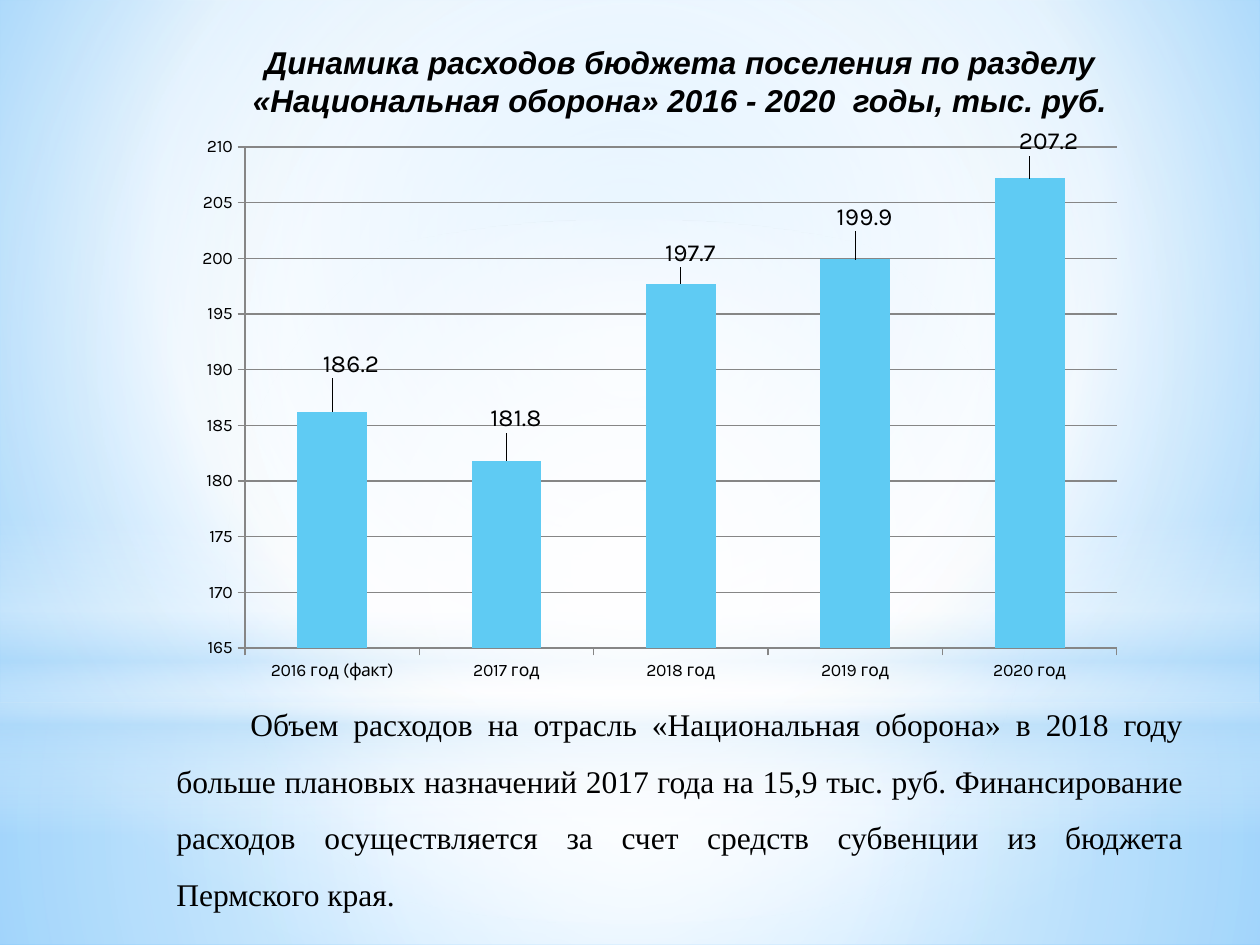
from lxml import etree
from pptx import Presentation
from pptx.chart.data import CategoryChartData
from pptx.dml.color import RGBColor
from pptx.enum.chart import XL_CHART_TYPE, XL_LABEL_POSITION, XL_TICK_MARK
from pptx.enum.shapes import MSO_SHAPE
from pptx.enum.text import PP_ALIGN
from pptx.oxml import parse_xml
from pptx.oxml.ns import nsdecls, qn
from pptx.util import Pt

PX = 914400 / 126
BLACK = RGBColor(0x00, 0x00, 0x00)
BAR_BLUE = RGBColor(0x5F, 0xCB, 0xF3)
GRID_GRAY = RGBColor(0x86, 0x86, 0x86)


def px(*lengths):
    return [round(length * PX) for length in lengths]


def set_gradient(owner, stops, focus):
    gradient = etree.Element(qn("a:gradFill"), rotWithShape="1")
    stop_list = etree.SubElement(gradient, qn("a:gsLst"))
    for position, color, alpha in stops:
        stop = etree.SubElement(stop_list, qn("a:gs"), pos=str(position * 1000))
        tint = etree.SubElement(stop, qn("a:srgbClr"), val=color)
        if alpha < 100:
            etree.SubElement(tint, qn("a:alpha"), val=str(alpha * 1000))
    if focus:
        circle = etree.SubElement(gradient, qn("a:path"), path="circle")
        sides = {side: str(share * 1000) for side, share in zip("ltrb", focus)}
        etree.SubElement(circle, qn("a:fillToRect"), **sides)
    else:
        etree.SubElement(gradient, qn("a:lin"), ang="5400000", scaled="0")
    solid = owner.find(".//" + qn("a:solidFill"))
    solid.getparent().replace(solid, gradient)


presentation = Presentation()
presentation.slide_width, presentation.slide_height = px(1260, 945)
slide = presentation.slides.add_slide(presentation.slide_layouts[6])

slide.background.fill.solid()
set_gradient(
    slide.element,
    [(0, "9ED5FF", 100), (60, "FFFFFF", 100), (100, "5BB9FF", 100)],
    (20, 10, 20, 60),
)

CENTER = (50, 50, 50, 50)
glows = [
    (MSO_SHAPE.RECTANGLE, (0, 703, 1260, 242), CENTER,
     [(0, "FFFFFF", 91), (37, "FFFFFF", 76), (100, "B4DCFA", 79)]),
    (MSO_SHAPE.RECTANGLE, (0, 0, 1260, 703), CENTER,
     [(0, "FFFFFF", 89), (48, "FFFFFF", 62), (100, "B4DCFA", 79)]),
    (MSO_SHAPE.RECTANGLE, (0, 519, 1260, 315), None,
     [(0, "FFFFFF", 0), (29, "FFFFFF", 30), (45, "B4DCFA", 40),
      (55, "FFFFFF", 26), (65, "B4DCFA", 60), (100, "FFFFFF", 0)]),
    (MSO_SHAPE.OVAL, (0, 220, 1260, 703), CENTER,
     [(0, "FFFFFF", 100), (56, "FFFFFF", 0)]),
]
for outline, box, focus, stops in glows:
    glow = slide.shapes.add_shape(outline, *px(*box))
    glow.shadow.inherit = False
    glow.line.fill.background()
    glow.fill.solid()
    set_gradient(glow.element, stops, focus)

texts = [
    ((164, 37, 1032, 89), PP_ALIGN.CENTER, "Arial", True, 1, 0,
     "Динамика расходов бюджета поселения по разделу\n"
     "«Национальная оборона» 2016 - 2020  годы, тыс. руб."),
    ((164, 680, 1032, 242), PP_ALIGN.JUSTIFY, "Times New Roman", False, 1.5, 74,
     "Объем расходов на отрасль «Национальная оборона» в 2018 году больше "
     "плановых назначений 2017 года на 15,9 тыс. руб. Финансирование расходов "
     "осуществляется за счет средств субвенции из бюджета Пермского края."),
]
for box, alignment, font_name, emphasis, spacing, indent, wording in texts:
    frame = slide.shapes.add_textbox(*px(*box)).text_frame
    frame.word_wrap = True
    paragraph = frame.paragraphs[0]
    paragraph.text = wording
    paragraph.alignment = alignment
    paragraph.line_spacing = spacing
    paragraph._p.get_or_add_pPr().set("indent", str(px(indent)[0]))
    for run in paragraph.runs:
        run.font.name = font_name
        run.font.size = Pt(18)
        run.font.bold = run.font.italic = emphasis
        run.font.color.rgb = BLACK

expenses = CategoryChartData()
expenses.categories = ["2016 год (факт)", "2017 год", "2018 год", "2019 год", "2020 год"]
expenses.add_series("Series 1", [186.2, 181.8, 197.7, 199.9, 207.2])
chart = slide.shapes.add_chart(
    XL_CHART_TYPE.COLUMN_CLUSTERED, *px(184, 125, 953, 566), expenses
).chart
chart.has_legend = False
chart.has_title = False
chart.font.name = "Karla"
chart.font.size = Pt(10)
chart.font.color.rgb = BLACK

value_axis = chart.value_axis
value_axis.minimum_scale = 165
value_axis.maximum_scale = 210
value_axis.major_unit = 5
value_axis.has_major_gridlines = True
value_axis.major_gridlines.format.line.color.rgb = GRID_GRAY
for axis in (chart.category_axis, value_axis):
    axis.major_tick_mark = XL_TICK_MARK.OUTSIDE
    axis.format.line.color.rgb = GRID_GRAY

plot = chart.plots[0]
plot.gap_width = 150
plot.vary_by_categories = False
bars = plot.series[0]
bars.format.fill.solid()
bars.format.fill.fore_color.rgb = BAR_BLUE

label_shifts = [(0.02, -0.05), (0.01, -0.04), (0.01, -0.02), (0.01, -0.04), (0.02, -0.03)]
for index in range(len(label_shifts)):
    label = bars.points[index].data_label
    label.font.size = Pt(14)
    label.font.name = "Karla"
    label.font.color.rgb = BLACK
    label.position = XL_LABEL_POSITION.OUTSIDE_END
for label_xml, (across, down) in zip(chart.element.iter(qn("c:dLbl")), label_shifts):
    label_xml[0].addnext(parse_xml(
        f'<c:layout {nsdecls("c")}><c:manualLayout>'
        f'<c:x val="{across}"/><c:y val="{down}"/></c:manualLayout></c:layout>'
    ))

plot_area = chart.element.find(".//" + qn("c:plotArea"))
for old_layout in plot_area.findall(qn("c:layout")):
    plot_area.remove(old_layout)
plot_area.insert(0, parse_xml(
    f'<c:layout {nsdecls("c")}><c:manualLayout><c:layoutTarget val="inner"/>'
    '<c:xMode val="edge"/><c:yMode val="edge"/><c:x val="0.064"/><c:y val="0.039"/>'
    '<c:w val="0.915"/><c:h val="0.885"/></c:manualLayout></c:layout>'
))

presentation.save("out.pptx")
